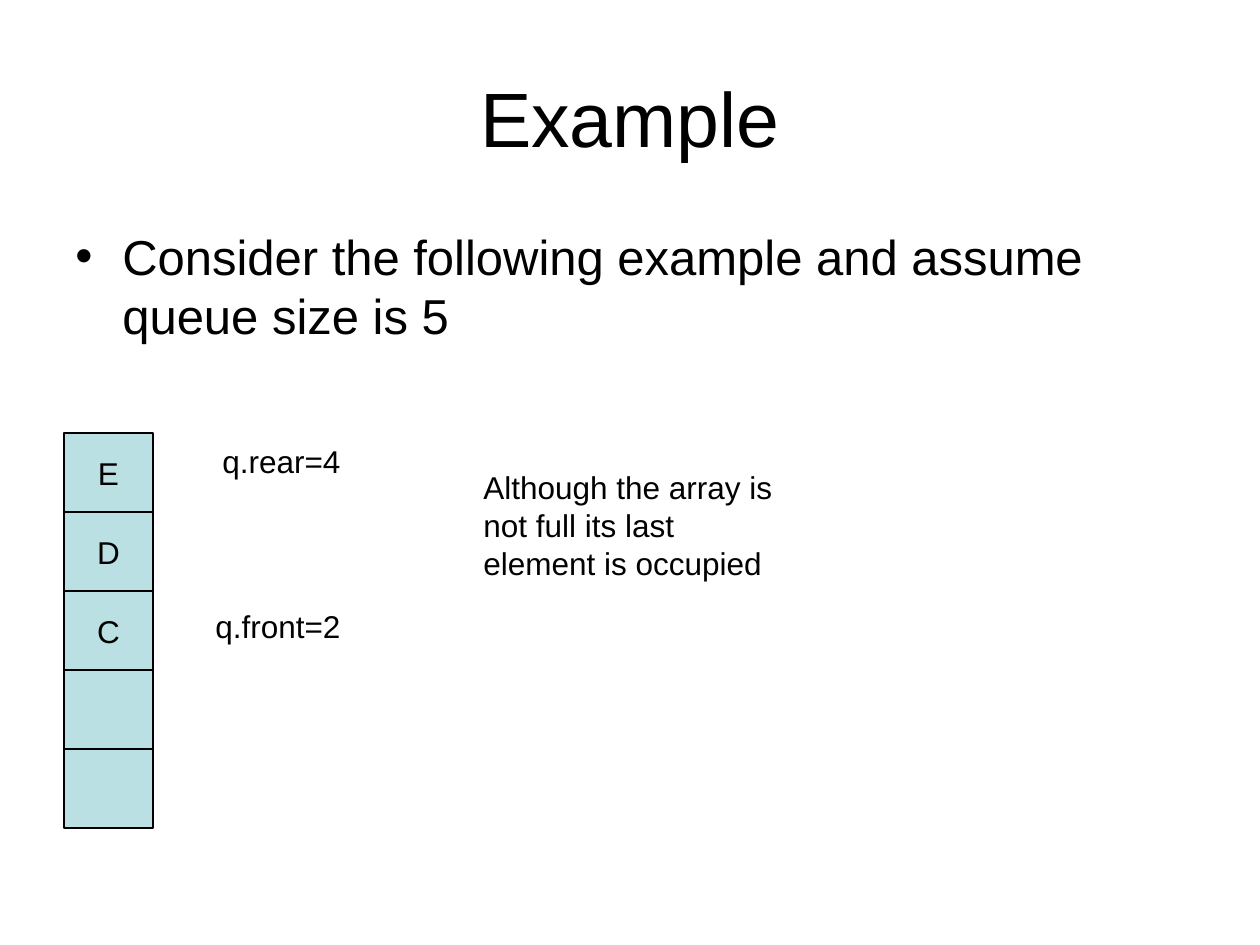
from dataclasses import dataclass

from lxml.etree import SubElement
from pptx import Presentation
from pptx.dml.color import RGBColor
from pptx.enum.shapes import MSO_SHAPE
from pptx.enum.text import MSO_ANCHOR, MSO_AUTO_SIZE, PP_ALIGN
from pptx.oxml.ns import qn
from pptx.util import Emu, Pt

EMU_PER_PX = 914400 / 126


@dataclass(frozen=True)
class Theme:
    font: str = "Arial"
    ink: RGBColor = RGBColor(0x00, 0x00, 0x00)
    cell: RGBColor = RGBColor(0xBB, 0xE0, 0xE3)
    title_size: int = 44
    body_size: int = 28
    label_size: int = 18
    outline: float = 0.75


@dataclass(frozen=True)
class Box:
    left: int
    top: int
    width: int
    height: int

    def emu(self) -> tuple:
        return tuple(px(n) for n in (self.left, self.top, self.width, self.height))


@dataclass(frozen=True)
class Label:
    text: str
    box: Box
    wrap: bool = False
    space_before: int = 0


THEME = Theme()
SLIDE = Box(0, 0, 1260, 945)
TITLE = Box(63, 38, 1134, 157)
STATEMENT = Box(63, 220, 1134, 134)
BULLET_INDENT = 47
TOP_CELL = Box(64, 433, 89, 79)
QUEUE = ("E", "D", "C", "", "")
LABELS = (
    Label("q.rear=4", Box(210, 436, 144, 50)),
    Label("q.front=2", Box(203, 601, 150, 50)),
    Label("Although the array is not full its last element is occupied",
          Box(471, 462, 328, 126), wrap=True, space_before=50),
)


def px(length: int) -> Emu:
    return Emu(round(length * EMU_PER_PX))


def write(frame, text: str, *, size: int, align=PP_ALIGN.LEFT,
          anchor=MSO_ANCHOR.TOP, wrap: bool = True, grow: bool = False,
          space_before: int = 0, bullet: str = "") -> None:
    frame.word_wrap = wrap
    frame.auto_size = MSO_AUTO_SIZE.SHAPE_TO_FIT_TEXT if grow else MSO_AUTO_SIZE.NONE
    frame.vertical_anchor = anchor
    paragraph = frame.paragraphs[0]
    paragraph.alignment = align
    run = paragraph.add_run()
    run.text = text
    run.font.name = THEME.font
    run.font.size = Pt(size)
    run.font.color.rgb = THEME.ink
    properties = paragraph._p.get_or_add_pPr()
    if space_before:
        spacing = SubElement(properties, qn("a:spcBef"))
        SubElement(spacing, qn("a:spcPct")).set("val", str(space_before * 1000))
    if bullet:
        properties.set("marL", str(px(BULLET_INDENT)))
        properties.set("indent", str(-px(BULLET_INDENT)))
        SubElement(properties, qn("a:buFont")).set("typeface", THEME.font)
        SubElement(properties, qn("a:buChar")).set("char", bullet)


def draw_title(slide, text: str) -> None:
    title = slide.shapes.title
    title.left, title.top, title.width, title.height = TITLE.emu()
    write(title.text_frame, text, size=THEME.title_size,
          align=PP_ALIGN.CENTER, anchor=MSO_ANCHOR.MIDDLE)


def draw_cell(slide, element: str, box: Box) -> None:
    cell = slide.shapes.add_shape(MSO_SHAPE.RECTANGLE, *box.emu())
    cell.shadow.inherit = False
    cell.fill.solid()
    cell.fill.fore_color.rgb = THEME.cell
    cell.line.color.rgb = THEME.ink
    cell.line.width = Pt(THEME.outline)
    if element:
        write(cell.text_frame, element, size=THEME.label_size, wrap=False,
              align=PP_ALIGN.CENTER, anchor=MSO_ANCHOR.MIDDLE)


def draw_label(slide, label: Label) -> None:
    textbox = slide.shapes.add_textbox(*label.box.emu())
    write(textbox.text_frame, label.text, size=THEME.label_size, grow=True,
          wrap=label.wrap, space_before=label.space_before)


def main() -> None:
    presentation = Presentation()
    presentation.slide_width = px(SLIDE.width)
    presentation.slide_height = px(SLIDE.height)
    slide = presentation.slides.add_slide(presentation.slide_layouts[5])

    draw_title(slide, "Example")
    statement = slide.shapes.add_textbox(*STATEMENT.emu())
    write(statement.text_frame,
          "Consider the following example and assume queue size is 5",
          size=THEME.body_size, space_before=20, bullet="•")
    for row, element in enumerate(QUEUE):
        top = TOP_CELL.top + row * TOP_CELL.height
        draw_cell(slide, element,
                  Box(TOP_CELL.left, top, TOP_CELL.width, TOP_CELL.height))
    for label in LABELS:
        draw_label(slide, label)

    presentation.save("out.pptx")


if __name__ == "__main__":
    main()
